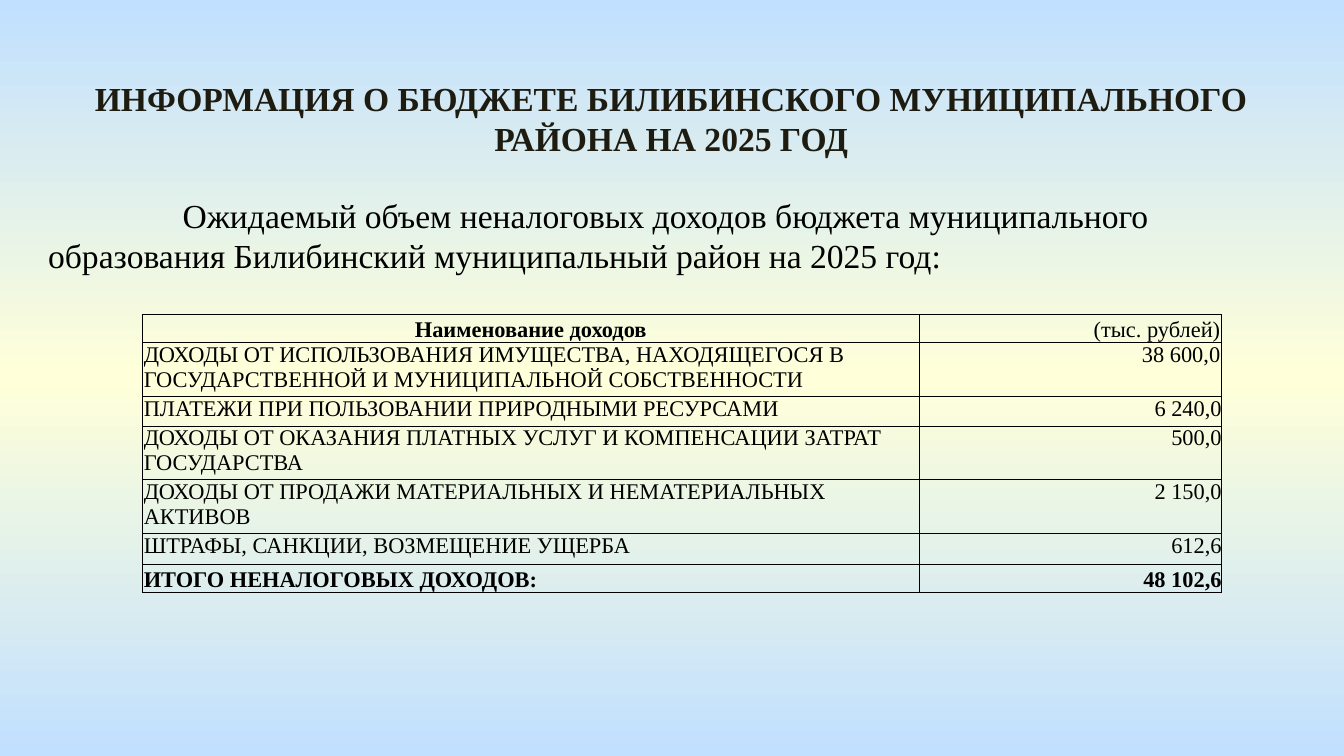
from copy import deepcopy
from dataclasses import dataclass

from lxml.etree import SubElement
from pptx import Presentation
from pptx.dml.color import RGBColor
from pptx.enum.text import MSO_ANCHOR as Anchor, PP_ALIGN as Align
from pptx.oxml.ns import qn
from pptx.util import Inches, Pt


@dataclass(frozen=True)
class Theme:
    font: str = "Times New Roman"
    sky: str = "C1E0FF"
    cream: str = "FFFFD9"
    title: str = "1E1C11"
    text: str = "000000"
    large: int = 18
    small: int = 12
    border: float = 0.5


theme = Theme()


def write(frame, text, size, color=theme.text, bold=False, align=Align.LEFT):
    frame.word_wrap = True
    paragraph = frame.paragraphs[0]
    paragraph.text = text
    paragraph.alignment = align
    font = paragraph.font
    font.name, font.size, font.bold = theme.font, Pt(size), bold
    font.color.rgb = RGBColor.from_string(color)
    return paragraph


def outline(cell):
    """Draw a thin solid line on all four sides of a table cell."""
    properties = cell._tc.get_or_add_tcPr()
    for position, side in enumerate(("lnL", "lnR", "lnT", "lnB")):
        line = SubElement(properties, qn(f"a:{side}"), w=str(Pt(theme.border)))
        fill = SubElement(line, qn("a:solidFill"))
        SubElement(fill, qn("a:srgbClr"), val=theme.text)
        properties.insert(position, line)


deck = Presentation()
deck.slide_width = Inches(10)
deck.slide_height = deck.slide_width * 9 // 16
page = deck.slides.add_slide(deck.slide_layouts[6])

# Background: sky, cream in the middle, sky again
background = page.background.fill
background.gradient()
background.gradient_angle = 90
stop_list = page._element.find(".//" + qn("a:gsLst"))
stop_list.insert(1, deepcopy(stop_list[0]))
stops = zip(background.gradient_stops, (0, 0.5, 1), (theme.sky, theme.cream, theme.sky))
for stop, position, color in stops:
    stop.position = position
    stop.color.rgb = RGBColor.from_string(color)

# Title and introduction
title = page.shapes.add_textbox(Inches(0.39), Inches(0.53), Inches(9.21), Inches(0.71))
write(title.text_frame, "ИНФОРМАЦИЯ О БЮДЖЕТЕ БИЛИБИНСКОГО МУНИЦИПАЛЬНОГО РАЙОНА НА 2025 ГОД",
      theme.large, theme.title, bold=True, align=Align.CENTER)

intro = page.shapes.add_textbox(Inches(0.26), Inches(1.4), Inches(9.49), Inches(0.71))
paragraph = write(intro.text_frame,
                  "Ожидаемый объем неналоговых доходов бюджета муниципального образования "
                  "Билибинский муниципальный район на 2025 год:", theme.large)
paragraph._p.get_or_add_pPr().set("indent", str(Inches(1)))

# Income table: name, amount, row height
incomes = [
    ("Наименование доходов", "(тыс. рублей)", 0.21),
    ("ДОХОДЫ ОТ ИСПОЛЬЗОВАНИЯ ИМУЩЕСТВА, НАХОДЯЩЕГОСЯ В ГОСУДАРСТВЕННОЙ И "
     "МУНИЦИПАЛЬНОЙ СОБСТВЕННОСТИ", "38 600,0", 0.4),
    ("ПЛАТЕЖИ ПРИ ПОЛЬЗОВАНИИ ПРИРОДНЫМИ РЕСУРСАМИ", "6 240,0", 0.22),
    ("ДОХОДЫ ОТ ОКАЗАНИЯ ПЛАТНЫХ УСЛУГ И КОМПЕНСАЦИИ ЗАТРАТ ГОСУДАРСТВА", "500,0", 0.4),
    ("ДОХОДЫ ОТ ПРОДАЖИ МАТЕРИАЛЬНЫХ И НЕМАТЕРИАЛЬНЫХ АКТИВОВ", "2 150,0", 0.4),
    ("ШТРАФЫ, САНКЦИИ, ВОЗМЕЩЕНИЕ УЩЕРБА", "612,6", 0.23),
    ("ИТОГО НЕНАЛОГОВЫХ ДОХОДОВ:", "48 102,6", 0.21),
]
header, total = 0, len(incomes) - 1
table = page.shapes.add_table(len(incomes), 2, Inches(1.06), Inches(2.34),
                              Inches(8.03), Inches(2.08)).table
table.first_row = table.horz_banding = False
for column, width in zip(table.columns, (5.78, 2.25)):
    column.width = Inches(width)

for row, (*texts, height) in enumerate(incomes):
    table.rows[row].height = Inches(height)
    for column, text in enumerate(texts):
        cell = table.cell(row, column)
        cell.fill.background()
        outline(cell)
        inset = Inches(0 if column == 1 and row > 1 else 0.01)
        cell.margin_left = cell.margin_right = inset
        cell.margin_top = cell.margin_bottom = 0
        cell.vertical_anchor = Anchor.BOTTOM if row in (header, total) else Anchor.TOP
        if column == 1:
            align = Align.RIGHT
        else:
            align = Align.CENTER if row == header else Align.LEFT
        bold = row == total or (row == header and column == 0)
        write(cell.text_frame, text, theme.small, bold=bold, align=align)

deck.save("out.pptx")
